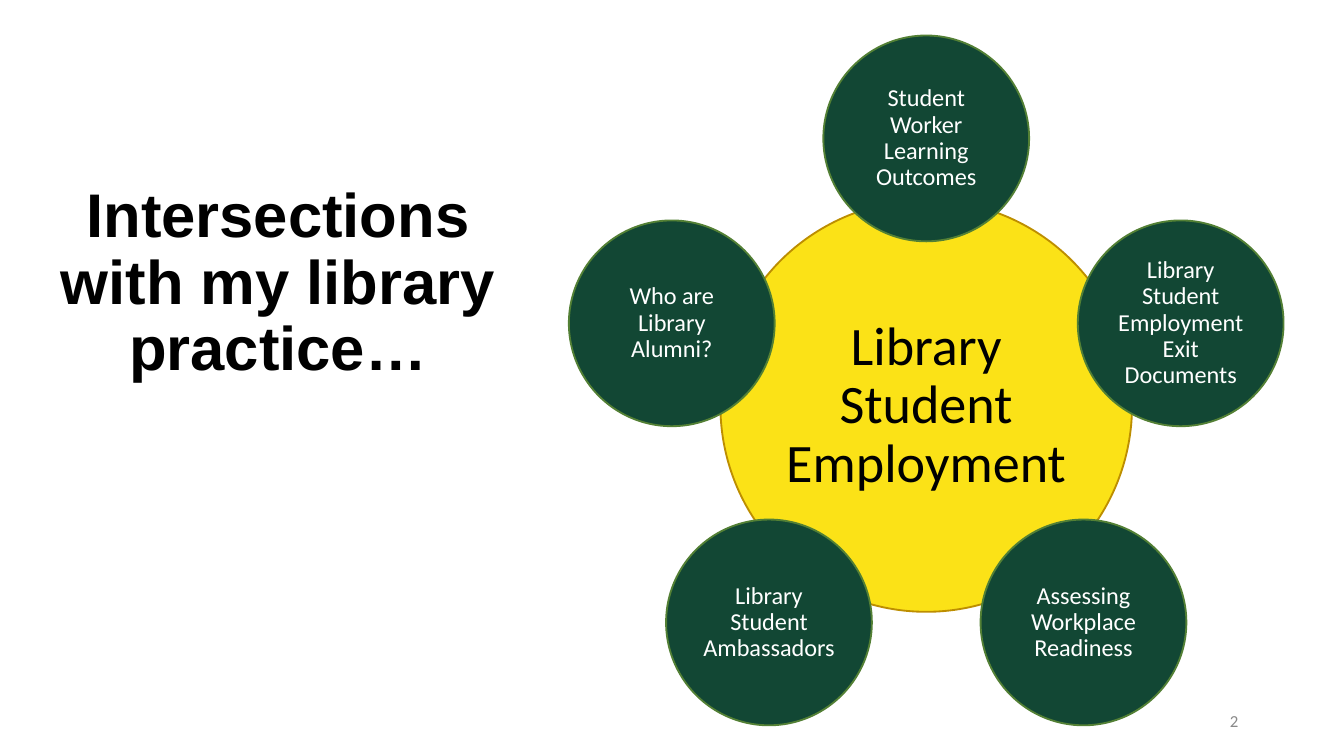
import math

import pptx
import pptx.dml.color
import pptx.enum.shapes
import pptx.enum.text
import pptx.util

Pt = pptx.util.Pt
ALIGN = pptx.enum.text.PP_ALIGN
HUES = {
    "ink": "000000", "white": "FFFFFF", "gray": "898989",
    "gold": "FBE217", "rim": "BD8E00",
    "green": "124734", "edge": "538035",
}
HUB = "Library Student Employment"
TOPICS = [  # clockwise from the top
    "Student Worker Learning Outcomes",
    "Library Student Employment Exit Documents",
    "Assessing Workplace Readiness",
    "Library Student Ambassadors",
    "Who are Library Alumni?",
]


def color(name):
    return pptx.dml.color.RGBColor.from_string(HUES[name])


def write(shape, text, hue, align=ALIGN.CENTER, pad=None, space=0.9, **font):
    frame = shape.text_frame
    form = {
        "word_wrap": True,
        "auto_size": pptx.enum.text.MSO_AUTO_SIZE.NONE,
        "vertical_anchor": pptx.enum.text.MSO_ANCHOR.MIDDLE,
    }
    if pad is not None:
        for side in ("left", "top", "right", "bottom"):
            form["margin_" + side] = Pt(pad)
    for key, value in form.items():
        setattr(frame, key, value)
    frame.text = text
    para = frame.paragraphs[0]
    para.alignment = align
    para.line_spacing = space
    run = para.runs[0]
    for key, value in font.items():
        setattr(run.font, key, value)
    run.font.color.rgb = color(hue)


def add_title(slide, left, top, width, height):
    title = slide.shapes.title
    place = {"left": left, "top": top, "width": width, "height": height}
    for key, value in place.items():
        setattr(title, key, Pt(value))
    write(title, "Intersections with my library practice…", "ink",
          name="Arial", size=Pt(33), bold=True)


def add_disc(group, x, y, size, text, fill, line, hue, pad, points):
    disc = group.shapes.add_shape(
        pptx.enum.shapes.MSO_SHAPE.OVAL,
        Pt(x - size / 2), Pt(y - size / 2), Pt(size), Pt(size))
    disc.shadow.inherit = False
    disc.fill.solid()
    disc.fill.fore_color.rgb = color(fill)
    disc.line.color.rgb = color(line)
    disc.line.width = Pt(1)
    write(disc, text, hue, pad=pad, name="Calibri", size=Pt(points))


def add_wheel(slide, x, y, hub):
    """Hub disc centred at x, y with half-size topic discs around it."""
    group = slide.shapes.add_group_shape()
    add_disc(group, x, y, hub, HUB, "gold", "rim", "ink", 2.9, 29)
    reach = hub * 0.65
    for i, topic in enumerate(TOPICS):
        turn = math.tau * i / len(TOPICS)
        add_disc(group, x + reach * math.sin(turn), y - reach * math.cos(turn),
                 hub / 2, topic, "green", "edge", "white", 1.3, 13)


def add_number(slide, left, top, width, height):
    box = slide.shapes.add_textbox(Pt(left), Pt(top), Pt(width), Pt(height))
    write(box, "2", "gray", align=ALIGN.RIGHT, space=1.0,
          name="Calibri", size=Pt(9))


def main():
    deck = pptx.Presentation()
    deck.slide_width, deck.slide_height = Pt(720), Pt(405)
    slide = deck.slides.add_slide(deck.slide_layouts[5])
    add_title(slide, 23, 113, 252, 78.5)
    add_wheel(slide, 496.2, 217.5, 220.5)
    add_number(slide, 508.5, 375.3, 162, 21.6)
    deck.save("out.pptx")


if __name__ == "__main__":
    main()
